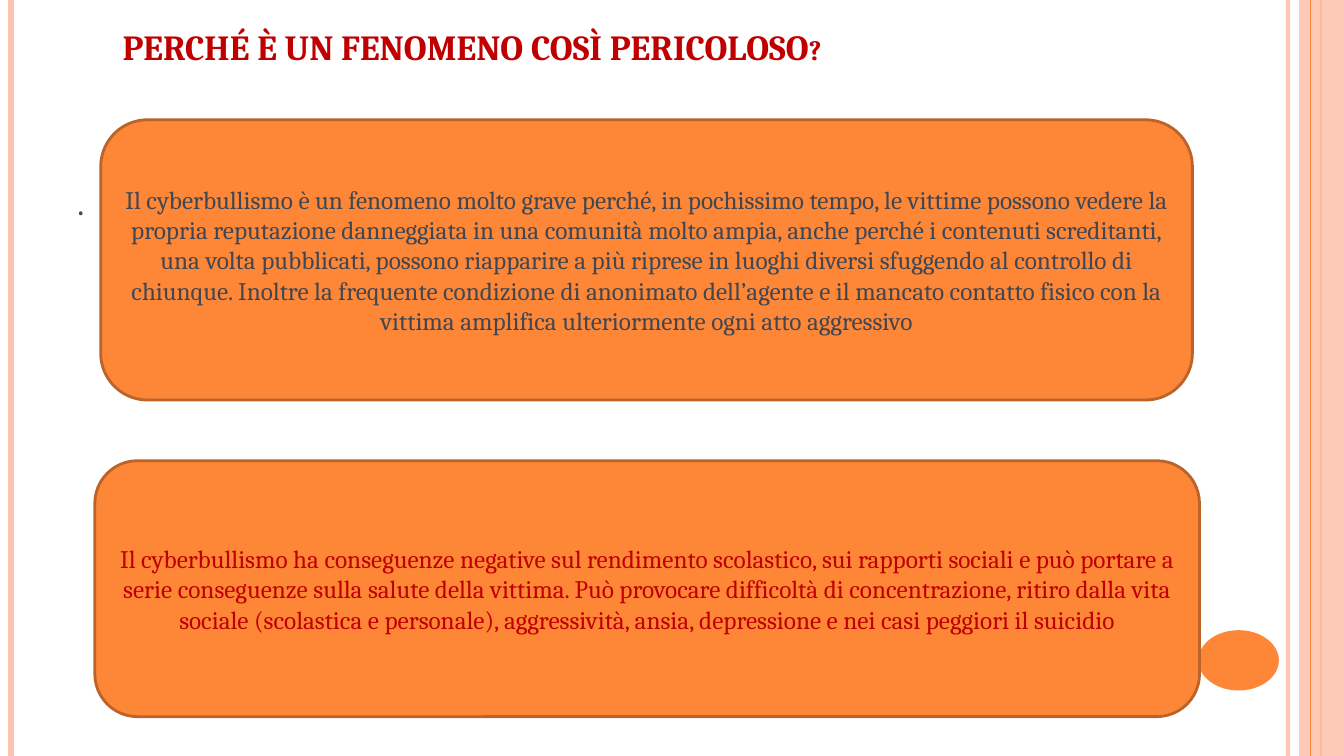
from dataclasses import dataclass

from lxml.etree import SubElement
from pptx import Presentation
from pptx.dml.color import RGBColor
from pptx.enum.shapes import MSO_CONNECTOR, MSO_SHAPE as Shp
from pptx.enum.text import MSO_ANCHOR as Anchor, PP_ALIGN as Align
from pptx.oxml.ns import qn
from pptx.util import Cm, Pt

COLORS = {
    "orange": "FE8637",
    "peach": "FEC3AE",
    "brown": "BC6329",
    "red": "C00000",
    "slate": "414752",
}
FONT = "Cambria"
WIDTH, HEIGHT = 33.87, 19.05


@dataclass
class Box:
    left: float
    top: float
    width: float
    height: float

    def lengths(self) -> tuple:
        return Cm(self.left), Cm(self.top), Cm(self.width), Cm(self.height)


@dataclass
class Stripe:
    x: float
    color: str
    weight: float
    opacity: int = 100


@dataclass
class Panel:
    box: Box
    color: str
    text: str


BACK_STRIPES = [
    Stripe(32.46, "peach", 3, 93),
    Stripe(0.28, "peach", 4.5),
    Stripe(33.3, "orange", 1.5),
]
FRONT_STRIPE = Stripe(33.02, "orange", 0.75)
SIDE_BAND = Box(32.74, 0, 1.13, HEIGHT)
PAGE_DISC = Box(30.2, 15.88, 2.03, 1.52)
TITLE_BOX = Box(2.84, 0.64, 27.28, 2.13)
BODY_BOX = Box(1.7, 4.45, 27.66, 13.54)
PANELS = [
    Panel(
        Box(2.54, 3.02, 27.51, 7.06),
        "slate",
        "Il cyberbullismo è un fenomeno molto grave perché, in pochissimo tempo, "
        "le vittime possono vedere la propria reputazione danneggiata in una "
        "comunità molto ampia, anche perché i contenuti screditanti, una volta "
        "pubblicati, possono riapparire a più riprese in luoghi diversi sfuggendo "
        "al controllo di chiunque. Inoltre la frequente condizione di anonimato "
        "dell’agente e il mancato contatto fisico con la vittima amplifica "
        "ulteriormente ogni atto aggressivo",
    ),
    Panel(
        Box(2.39, 11.61, 27.84, 6.45),
        "red",
        "Il cyberbullismo ha conseguenze negative sul rendimento scolastico, sui "
        "rapporti sociali e può portare a serie conseguenze sulla salute della "
        "vittima. Può provocare difficoltà di concentrazione, ritiro dalla vita "
        "sociale (scolastica e personale), aggressività, ansia, depressione e nei "
        "casi peggiori il suicidio",
    ),
]


def rgb(name: str) -> RGBColor:
    return RGBColor.from_string(COLORS[name])


def set_opacity(sp, percent: int) -> None:
    clr = sp.element.xpath(".//a:srgbClr")[0]
    SubElement(clr, qn("a:alpha")).set("val", str(percent * 1000))


def style_run(r, color: str, size: float, bold: bool = False) -> None:
    r.font.name = FONT
    r.font.size = Pt(size)
    r.font.bold = bold
    r.font.color.rgb = rgb(color)


def add_stripe(slide, stripe: Stripe) -> None:
    x = Cm(stripe.x)
    line = slide.shapes.add_connector(MSO_CONNECTOR.STRAIGHT, x, 0, x, Cm(HEIGHT))
    line.line.color.rgb = rgb(stripe.color)
    line.line.width = Pt(stripe.weight)
    if stripe.opacity < 100:
        set_opacity(line, stripe.opacity)
    SubElement(line.element.spPr, qn("a:effectLst"))


def add_filled(slide, kind: Shp, box: Box, color: str):
    sp = slide.shapes.add_shape(kind, *box.lengths())
    sp.shadow.inherit = False
    sp.fill.solid()
    sp.fill.fore_color.rgb = rgb(color)
    sp.line.fill.background()
    return sp


def add_text(slide, box: Box, text: str, color: str, size: float, bold: bool = False):
    sp = slide.shapes.add_textbox(*box.lengths())
    tf = sp.text_frame
    tf.word_wrap = True
    tf.text = text
    style_run(tf.paragraphs[0].runs[0], color, size, bold)
    return tf


def add_title(slide) -> None:
    tf = add_text(
        slide, TITLE_BOX, "PERCHÉ È UN FENOMENO COSÌ PERICOLOSO", "red", 25.2, True
    )
    tf.margin_top = 0
    mark = tf.paragraphs[0].add_run()
    mark.text = "?"
    style_run(mark, "red", 20, True)


def add_panel(slide, panel: Panel) -> None:
    sp = add_filled(slide, Shp.ROUNDED_RECTANGLE, panel.box, "orange")
    sp.line.color.rgb = rgb("brown")
    sp.line.width = Pt(2)
    tf = sp.text_frame
    tf.word_wrap = True
    tf.vertical_anchor = Anchor.MIDDLE
    tf.text = panel.text
    p = tf.paragraphs[0]
    p.alignment = Align.CENTER
    style_run(p.runs[0], panel.color, 18)


def main() -> None:
    prs = Presentation()
    prs.slide_width, prs.slide_height = Cm(WIDTH), Cm(HEIGHT)
    slide = prs.slides.add_slide(prs.slide_layouts[6])
    for stripe in BACK_STRIPES:
        add_stripe(slide, stripe)
    set_opacity(add_filled(slide, Shp.RECTANGLE, SIDE_BAND, "peach"), 87)
    add_stripe(slide, FRONT_STRIPE)
    add_filled(slide, Shp.OVAL, PAGE_DISC, "orange")
    add_title(slide)
    add_text(slide, BODY_BOX, ".", "slate", 24)
    for panel in PANELS:
        add_panel(slide, panel)
    prs.save("out.pptx")


if __name__ == "__main__":
    main()
